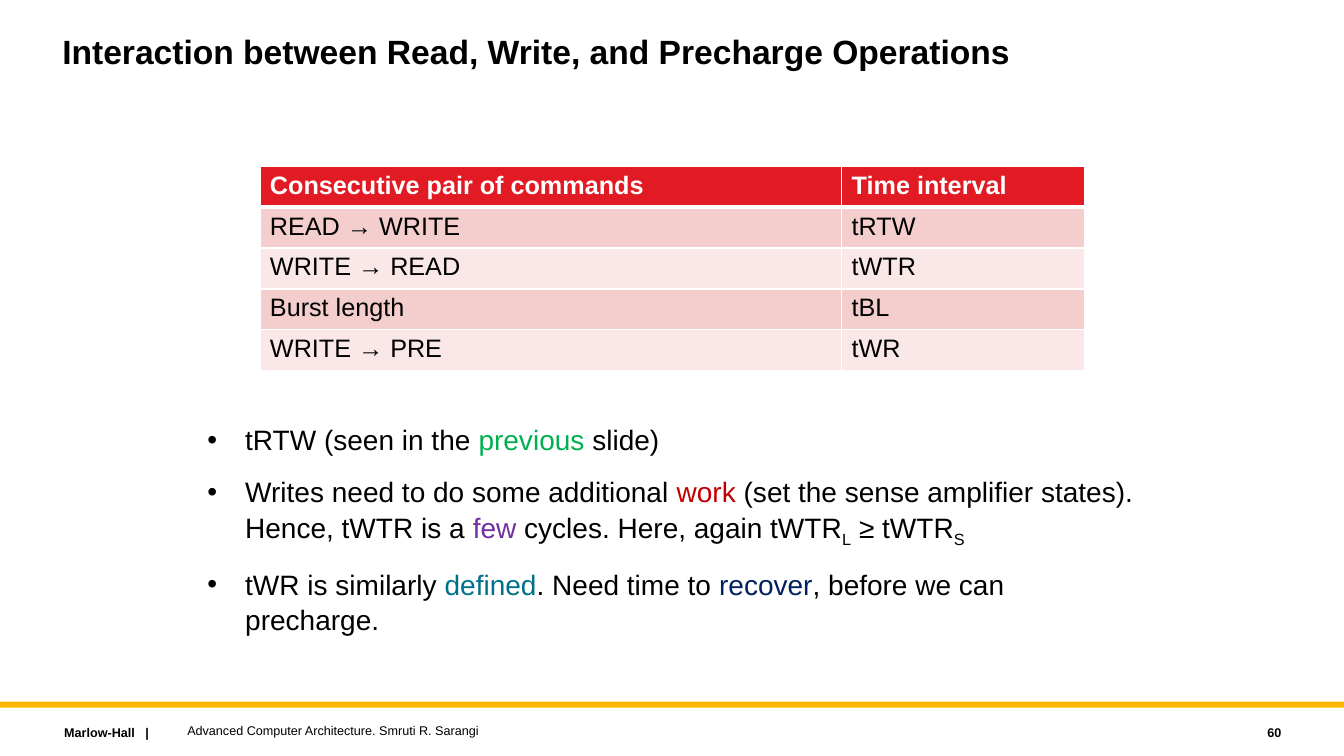
import lxml.etree
import pptx
import pptx.dml.color
import pptx.enum.shapes
import pptx.enum.text
import pptx.oxml.ns
import pptx.util

Cm = pptx.util.Cm
Pt = pptx.util.Pt
RGBColor = pptx.dml.color.RGBColor
ANCHOR = pptx.enum.text.MSO_ANCHOR
ALIGN = pptx.enum.text.PP_ALIGN
qn = pptx.oxml.ns.qn

BLACK = RGBColor(0x00, 0x00, 0x00)
WHITE = RGBColor(0xFF, 0xFF, 0xFF)
AMBER = RGBColor(0xFF, 0xB6, 0x00)
RED = RGBColor(0xE2, 0x1A, 0x23)
PINK = RGBColor(0xF4, 0xCD, 0xCD)
PALE_PINK = RGBColor(0xFA, 0xE8, 0xE8)
GREEN = RGBColor(0x00, 0xB0, 0x50)
DARK_RED = RGBColor(0xC0, 0x00, 0x00)
PURPLE = RGBColor(0x70, 0x30, 0xA0)
TEAL = RGBColor(0x01, 0x70, 0x8C)
NAVY = RGBColor(0x00, 0x20, 0x60)
SUBSCRIPT = "-25000"


def style_font(font, size, color=BLACK, bold=False):
    font.name = "Arial"
    font.size = Pt(size)
    font.color.rgb = color
    font.bold = bold


def add_frame(left, top, width, height, anchor=ANCHOR.TOP):
    """Add a wrapping text box, measured in centimetres, and return its text frame."""
    box = slide.shapes.add_textbox(Cm(left), Cm(top), Cm(width), Cm(height))
    box.text_frame.word_wrap = True
    box.text_frame.vertical_anchor = anchor
    return box.text_frame


presentation = pptx.Presentation()
presentation.slide_width = Cm(33.87)
presentation.slide_height = Cm(19.05)
slide = presentation.slides.add_slide(presentation.slide_layouts[6])

# Footer rule
footer_rule = slide.shapes.add_shape(
    pptx.enum.shapes.MSO_SHAPE.RECTANGLE, 0, Cm(17.68), presentation.slide_width, Cm(0.15))
footer_rule.shadow.inherit = False
footer_rule.fill.solid()
footer_rule.fill.fore_color.rgb = AMBER
footer_rule.line.fill.background()

# Title and footer texts
title = add_frame(1.32, 0.76, 25.4, 2.29)
title.text = "Interaction between Read, Write, and Precharge Operations"
title.paragraphs[0].line_spacing = 0.9
style_font(title.paragraphs[0].runs[0].font, 24, bold=True)

footers = [
    ("Marlow-Hall   |", 1.37, 18.14, 5.77, True, ALIGN.LEFT),
    ("Advanced Computer Architecture. Smruti R. Sarangi", 4.47, 18.08, 20.32, False, ALIGN.LEFT),
    ("60", 28.98, 18.14, 3.56, True, ALIGN.RIGHT),
]
for wording, left, top, width, bold, alignment in footers:
    footer = add_frame(left, top, width, 0.64, ANCHOR.MIDDLE)
    footer.text = wording
    footer.paragraphs[0].alignment = alignment
    style_font(footer.paragraphs[0].runs[0].font, 9, bold=bold)

# Timing table
timings = [
    ("Consecutive pair of commands", "Time interval"),
    ("READ → WRITE", "tRTW"),
    ("WRITE → READ", "tWTR"),
    ("Burst length", "tBL"),
    ("WRITE → PRE", "tWR"),
]
timing_table = slide.shapes.add_table(
    len(timings), 2, Cm(6.55), Cm(4.19), Cm(20.78), Cm(5.15)).table
timing_table.columns[0].width = Cm(14.66)
timing_table.columns[1].width = Cm(6.12)
for row, entries in enumerate(timings):
    is_header = row == 0
    timing_table.rows[row].height = Cm(1.03)
    for column, entry in enumerate(entries):
        cell = timing_table.cell(row, column)
        cell.text = entry
        style_font(cell.text_frame.paragraphs[0].runs[0].font, 18,
                   WHITE if is_header else BLACK, is_header)
        borders = {"lnL": 1, "lnR": 1, "lnT": 3 if row == 1 else 1, "lnB": 3 if is_header else 1}
        for side, points in borders.items():
            border = lxml.etree.SubElement(
                cell._tc.get_or_add_tcPr(), qn("a:" + side), w=str(Pt(points)))
            border_fill = lxml.etree.SubElement(border, qn("a:solidFill"))
            lxml.etree.SubElement(border_fill, qn("a:srgbClr"), val=str(WHITE))
        cell.fill.solid()
        cell.fill.fore_color.rgb = RED if is_header else PINK if row % 2 else PALE_PINK

# Bullets: each piece is wording, colour and baseline
bullets = [
    [("tRTW (seen in the ", BLACK, None), ("previous", GREEN, None), (" slide)", BLACK, None)],
    [("Writes need to do some additional ", BLACK, None), ("work", DARK_RED, None),
     (" (set the sense amplifier states). Hence, tWTR is a ", BLACK, None),
     ("few", PURPLE, None), (" cycles. Here, again tWTR", BLACK, None),
     ("L", BLACK, SUBSCRIPT), (" ≥ tWTR", BLACK, None), ("S", BLACK, SUBSCRIPT)],
    [("tWR is similarly ", BLACK, None), ("defined", TEAL, None),
     (". Need time to ", BLACK, None), ("recover", NAVY, None),
     (", before we can precharge.", BLACK, None)],
]
notes_on_timings = add_frame(4.98, 10.49, 23.93, 5.97)
for index, pieces in enumerate(bullets):
    paragraph = notes_on_timings.add_paragraph() if index else notes_on_timings.paragraphs[0]
    paragraph.line_spacing = 1.05
    if index:
        paragraph.space_before = Pt(12)
    properties = paragraph._p.get_or_add_pPr()
    properties.set("marL", str(Cm(0.95)))
    properties.set("indent", str(-Cm(0.95)))
    lxml.etree.SubElement(properties, qn("a:buFont"), typeface="Arial")
    lxml.etree.SubElement(properties, qn("a:buChar"), char="•")
    for wording, color, baseline in pieces:
        run = paragraph.add_run()
        run.text = wording
        style_font(run.font, 20, color)
        if baseline:
            run._r.get_or_add_rPr().set("baseline", baseline)

presentation.save("out.pptx")
